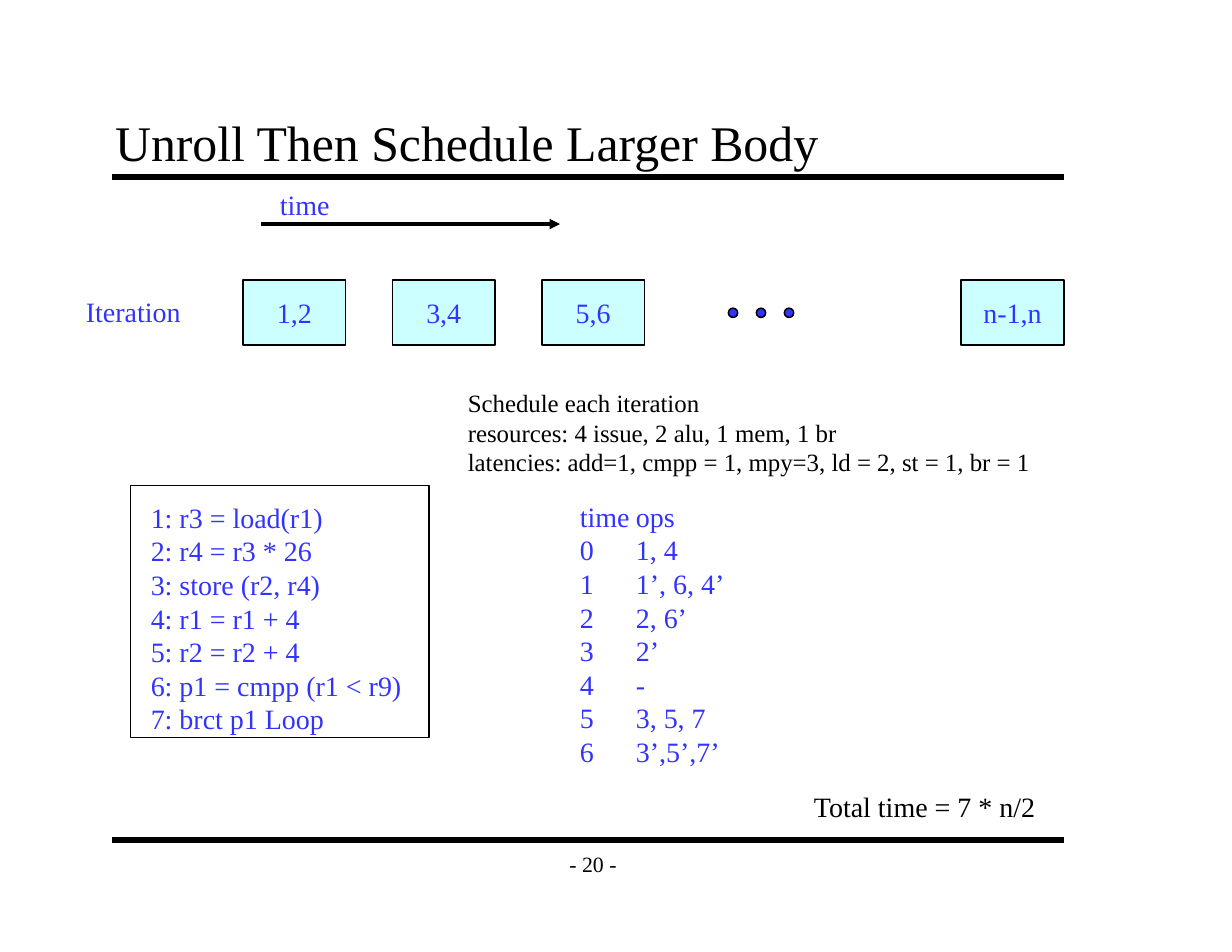
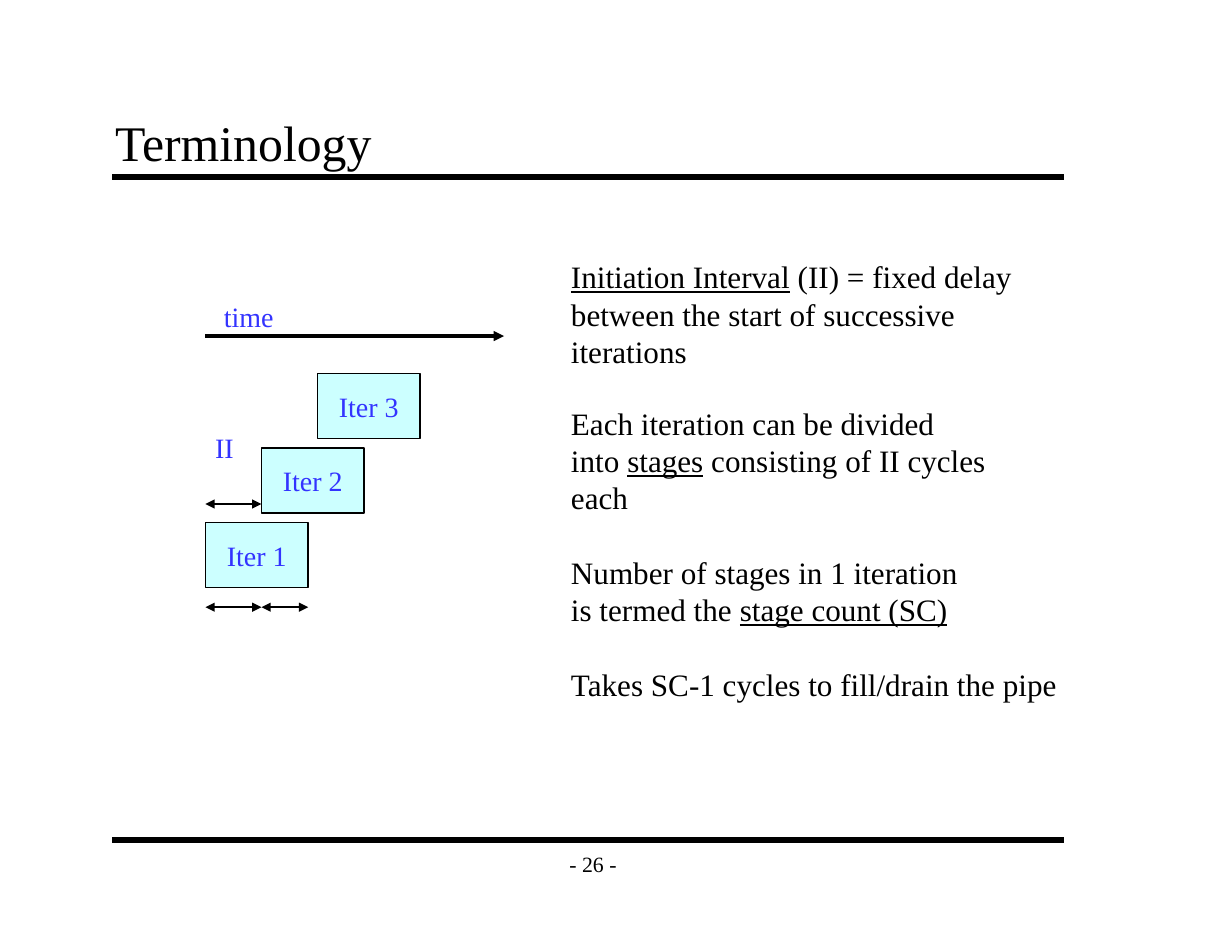
from lxml import etree
from pptx import Presentation
from pptx.dml.color import RGBColor
from pptx.enum.shapes import MSO_CONNECTOR, MSO_SHAPE
from pptx.enum.text import MSO_ANCHOR, MSO_AUTO_SIZE, PP_ALIGN
from pptx.oxml.ns import qn
from pptx.util import Cm, Pt

RECTANGLE, OVAL, STRAIGHT = MSO_SHAPE.RECTANGLE, MSO_SHAPE.OVAL, MSO_CONNECTOR.STRAIGHT
LEFT, CENTER = PP_ALIGN.LEFT, PP_ALIGN.CENTER
TOP, MIDDLE, BOTTOM = MSO_ANCHOR.TOP, MSO_ANCHOR.MIDDLE, MSO_ANCHOR.BOTTOM
NO_FIT, GROW = MSO_AUTO_SIZE.NONE, MSO_AUTO_SIZE.SHAPE_TO_FIT_TEXT

COLORS = {"ink": "000000", "accent": "3333FF", "block": "CCFFFF"}
FONT = "Times New Roman"
TITLE_LAYOUT = 5
LINE_HEIGHT = 1.2
BLOCK_WIDTH, BLOCK_HEIGHT = 2.33, 1.48

CODE = [
    "1: r3 = load(r1)",
    "2: r4 = r3 * 26",
    "3: store (r2, r4)",
    "4: r1 = r1 + 4",
    "5: r2 = r2 + 4",
    "6: p1 = cmpp (r1 < r9)",
    "7: brct p1 Loop",
]
MACHINE = [
    "Schedule each iteration",
    "resources: 4 issue, 2 alu, 1 mem, 1 br",
    "latencies: add=1, cmpp = 1, mpy=3, ld = 2, st = 1, br = 1",
]
OPERATIONS = ["1, 4", "1’, 6, 4’", "2, 6’", "2’", "-", "3, 5, 7", "3’,5’,7’"]
DEFINITIONS = [
    (0, [("Initiation Interval", True), (" (II) = fixed delay", False)]),
    (0, [("between the start of successive iterations", False)]),
    (22, [("Each iteration can be divided", False)]),
    (0, [("into ", False), ("stages", True), (" consisting of II cycles", False)]),
    (0, [("each", False)]),
    (24, [("Number of stages in 1 iteration", False)]),
    (0, [("is termed the ", False), ("stage count (SC)", True)]),
    (24, [("Takes SC-1 cycles to fill/drain the pipe", False)]),
]


def color(name):
    """Return the named colour."""
    return RGBColor.from_string(COLORS[name])


def add_run(paragraph, text, size, ink, underline=False):
    """Append one formatted run."""
    run = paragraph.add_run()
    run.text = text
    run.font.name = FONT
    run.font.size = Pt(size)
    run.font.color.rgb = color(ink)
    if underline:
        run.font.underline = True


def set_margins(frame):
    """Give a frame the wider insets of title and footer."""
    frame.margin_left = frame.margin_right = Cm(0.28)
    frame.margin_top = frame.margin_bottom = Cm(0.15)


def add_lines(slide, box, lines, size=18, ink="accent"):
    """Add a text box with one paragraph for each line."""
    frame = slide.shapes.add_textbox(*map(Cm, box)).text_frame
    frame.word_wrap = False
    frame.auto_size = GROW
    for index, line in enumerate(lines):
        paragraph = frame.paragraphs[0] if index == 0 else frame.add_paragraph()
        paragraph.line_spacing = Pt(size * LINE_HEIGHT)
        add_run(paragraph, line, size, ink)
    return frame


def add_line(slide, start, end, width, arrows=()):
    """Add a straight line with triangles at the listed ends."""
    points = map(Cm, (*start, *end))
    connector = slide.shapes.add_connector(STRAIGHT, *points)
    connector.line.color.rgb = color("ink")
    connector.line.width = Pt(width)
    properties = connector.line._get_or_add_ln()
    for arrow in arrows:
        etree.SubElement(properties, qn(f"a:{arrow}"), type="triangle")
    etree.SubElement(connector._element.spPr, qn("a:effectLst"))


def add_outline(slide, kind, box, fill=None):
    """Add a thinly outlined shape, filled if a colour is named."""
    shape = slide.shapes.add_shape(kind, *map(Cm, box))
    shape.shadow.inherit = False
    shape.line.color.rgb = color("ink")
    shape.line.width = Pt(1)
    if fill:
        shape.fill.solid()
        shape.fill.fore_color.rgb = color(fill)
    else:
        shape.fill.background()
    return shape


def add_block(slide, left, top, label):
    """Add one labelled iteration block."""
    box = (left, top, BLOCK_WIDTH, BLOCK_HEIGHT)
    frame = add_outline(slide, RECTANGLE, box, "block").text_frame
    frame.word_wrap = False
    frame.vertical_anchor = MIDDLE
    frame.paragraphs[0].alignment = CENTER
    add_run(frame.paragraphs[0], label, 18, "accent")


def add_time_axis(slide, left, top):
    """Add the time arrow with its label above."""
    add_line(slide, (left, top), (left + 6.77, top), 2.25, ["tailEnd"])
    add_lines(slide, (left + 0.17, top - 0.96, 1.65, 1.02), ["time"])


def add_base_slide(presentation, title, number):
    """Add a slide with title, two rules and page number."""
    slide = presentation.slides.add_slide(presentation.slide_layouts[TITLE_LAYOUT])
    for rule_top in (4.02, 19.05):
        add_line(slide, (2.54, rule_top), (24.13, rule_top), 4)

    footer = add_lines(slide, (12.5, 19.05, 1.9, 1.07), [f"- {number} -"], 14, "ink")
    footer.auto_size = NO_FIT
    footer.vertical_anchor = MIDDLE
    footer.paragraphs[0].alignment = CENTER
    set_margins(footer)

    heading = slide.shapes.title
    heading.left, heading.top = Cm(2.33), Cm(2.33)
    heading.width, heading.height = Cm(21.59), Cm(1.7)
    frame = heading.text_frame
    frame.auto_size = NO_FIT
    frame.vertical_anchor = BOTTOM
    set_margins(frame)
    frame.paragraphs[0].alignment = LEFT
    add_run(frame.paragraphs[0], title, 32, "ink")
    return slide


def add_iteration_row(slide, left, top):
    """Add the row of unrolled iterations with an ellipsis."""
    add_lines(slide, (left, top + 0.21, 2.67, 1.02), ["Iteration"])
    for index, label in enumerate(["1,2", "3,4", "5,6"]):
        add_block(slide, left + 3.81 + 3.39 * index, top, label)
    add_block(slide, left + 20.1, top, "n-1,n")
    for index in range(3):
        dot = (left + 14.82 + 0.635 * index, top + 0.64, 0.21, 0.21)
        add_outline(slide, OVAL, dot, "accent")


def add_code(slide, left, top):
    """Add the framed loop body."""
    add_lines(slide, (left + 0.21, top + 0.21, 6.2, 5.59), CODE)
    add_outline(slide, RECTANGLE, (left, top, 6.77, 5.72))


def add_schedule(slide, left, top):
    """Add the machine model, the schedule and its total time."""
    add_lines(slide, (left, top, 13.31, 2.29), MACHINE, 16, "ink")
    rows = [("time", "ops")]
    rows += [(str(cycle), operations) for cycle, operations in enumerate(OPERATIONS)]
    lines = ["\t".join(row) for row in rows]
    add_lines(slide, (left + 2.54, top + 2.54, 5.05, 6.35), lines)
    total = (left + 7.85, top + 9.12, 5.59, 1.02)
    add_lines(slide, total, ["Total time = 7 * n/2"], 18, "ink")


def add_pipeline(slide, left, top):
    """Add three staggered iterations and their interval arrows."""
    interval, rise = 1.27, 1.69
    for index in range(3):
        block_top = top + rise * (2 - index)
        add_block(slide, left + interval * index, block_top, f"Iter {index + 1}")
    add_lines(slide, (left - 0.03, top + 1.16, 0.94, 1.02), ["II"])
    spans = [(0, interval, 2.96), (0, interval, 5.3), (interval, BLOCK_WIDTH, 5.3)]
    for start, end, drop in spans:
        ends = (left + start, top + drop), (left + end, top + drop)
        add_line(slide, *ends, 1, ["headEnd", "tailEnd"])


def add_definitions(slide, left, top):
    """Add the definitions with the terms underlined."""
    frame = slide.shapes.add_textbox(*map(Cm, (left, top, 11.7, 9.47))).text_frame
    frame.word_wrap = True
    frame.vertical_anchor = TOP
    for index, (gap, runs) in enumerate(DEFINITIONS):
        paragraph = frame.paragraphs[0] if index == 0 else frame.add_paragraph()
        paragraph.line_spacing = Pt(20 * LINE_HEIGHT)
        paragraph.space_before = Pt(gap)
        for text, underline in runs:
            add_run(paragraph, text, 20, "ink", underline)


def build_unroll_slide(presentation):
    """Build the slide on scheduling the unrolled body."""
    slide = add_base_slide(presentation, "Unroll Then Schedule Larger Body", 20)
    add_iteration_row(slide, 1.7, 6.35)
    add_time_axis(slide, 5.93, 5.08)
    add_schedule(slide, 10.36, 8.66)
    add_code(slide, 2.96, 11.01)


def build_terminology_slide(presentation):
    """Build the slide on pipelining terms."""
    slide = add_base_slide(presentation, "Terminology", 26)
    add_pipeline(slide, 4.66, 8.47)
    add_time_axis(slide, 4.66, 7.62)
    add_definitions(slide, 12.7, 5.72)


def main():
    """Build and save the presentation."""
    presentation = Presentation()
    presentation.slide_width, presentation.slide_height = Cm(27.94), Cm(21.59)
    build_unroll_slide(presentation)
    build_terminology_slide(presentation)
    presentation.save("out.pptx")


if __name__ == "__main__":
    main()
